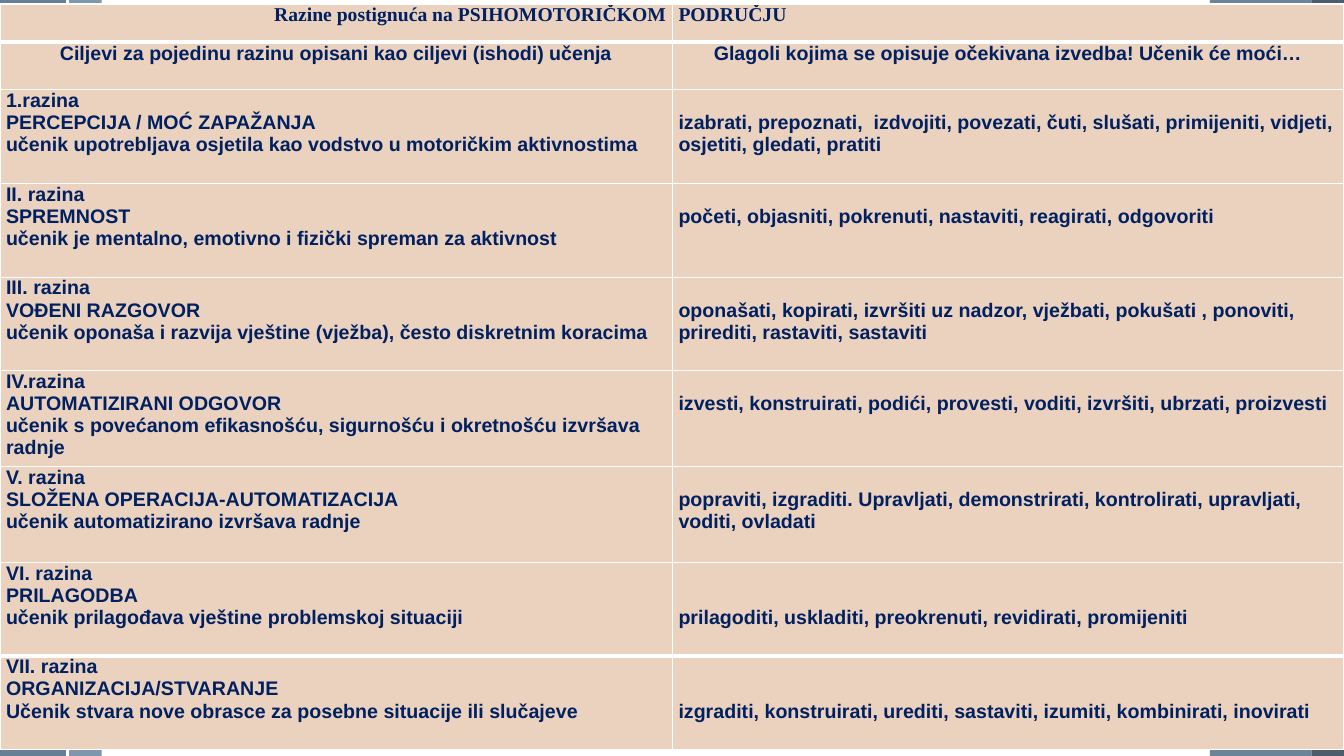
"""Build a slide with a table of psychomotor achievement levels."""
from dataclasses import dataclass

from lxml import etree
from pptx import Presentation
from pptx.dml.color import RGBColor
from pptx.enum.shapes import MSO_CONNECTOR, MSO_SHAPE
from pptx.enum.text import PP_ALIGN
from pptx.oxml.ns import qn
from pptx.util import Inches, Pt

RECTANGLE = MSO_SHAPE.RECTANGLE
STRAIGHT = MSO_CONNECTOR.STRAIGHT
LEFT, CENTER, RIGHT = PP_ALIGN.LEFT, PP_ALIGN.CENTER, PP_ALIGN.RIGHT
BLANK_LAYOUT = 6
PAGE_WIDTH, PAGE_HEIGHT = 13.33, 7.5


@dataclass(frozen=True)
class Theme:
    heading_font: str = "Times New Roman"
    body_font: str = "Arial"
    text_size: int = 14
    line_height: float = 0.22
    side_margin: float = 0.06
    ink: str = "002060"
    cell: str = "EBD2BF"
    rule: str = "FFFFFF"
    pale_strip: str = "7E97AD"
    mid_strip: str = "577289"
    dark_strip: str = "3A4C5B"
    thin: float = 1
    thick: float = 3


class SlideBuilder:
    def __init__(self, page, theme):
        self.page = page
        self.theme = theme

    def strip(self, left, width, color, opacity=100):
        box = self.page.shapes.add_shape(
            RECTANGLE, Inches(left), 0, Inches(width), Inches(PAGE_HEIGHT))
        box.shadow.inherit = False
        box.line.fill.background()
        box.fill.solid()
        box.fill.fore_color.rgb = RGBColor.from_string(color)
        if opacity < 100:
            color_node = box.fill._xPr.find(qn("a:solidFill"))[0]
            etree.SubElement(color_node, qn("a:alpha"), val=str(opacity * 1000))

    def vertical_line(self, left, width):
        line = self.page.shapes.add_connector(
            STRAIGHT, Inches(left), 0, Inches(left), Inches(PAGE_HEIGHT))
        line.line.color.rgb = RGBColor.from_string(self.theme.rule)
        line.line.width = Pt(width)
        etree.SubElement(line._element.spPr, qn("a:effectLst"))

    def table(self, top, widths, heights):
        frame = self.page.shapes.add_table(
            len(heights), len(widths), 0, Inches(top),
            Inches(sum(widths)), Inches(sum(heights)))
        table = frame.table
        table.first_row = table.horz_banding = False
        for column, width in zip(table.columns, widths):
            column.width = Inches(width)
        for row, height in zip(table.rows, heights):
            row.height = Inches(height)
        return table

    def borders(self, cell, top, bottom):
        properties = cell._tc.get_or_add_tcPr()
        widths = {"L": self.theme.thin, "R": self.theme.thin, "T": top, "B": bottom}
        for position, (side, width) in enumerate(widths.items()):
            line = etree.Element(qn(f"a:ln{side}"), w=str(Pt(width)))
            fill = etree.SubElement(line, qn("a:solidFill"))
            etree.SubElement(fill, qn("a:srgbClr"), val=self.theme.rule)
            properties.insert(position, line)

    def cell(self, cell, text, font, align=LEFT, lines_above=0):
        cell.margin_left = cell.margin_right = Inches(self.theme.side_margin)
        cell.margin_top = Inches(lines_above * self.theme.line_height)
        cell.margin_bottom = 0
        cell.fill.solid()
        cell.fill.fore_color.rgb = RGBColor.from_string(self.theme.cell)
        cell.text_frame.text = text
        for para in cell.text_frame.paragraphs:
            para.alignment = align
            for span in para.runs:
                span.font.name = font
                span.font.size = Pt(self.theme.text_size)
                span.font.bold = True
                span.font.color.rgb = RGBColor.from_string(self.theme.ink)


HEADINGS = ("Razine postignuća na PSIHOMOTORIČKOM", "PODRUČJU")
SUBHEADINGS = (
    "Ciljevi za pojedinu razinu opisani kao ciljevi (ishodi) učenja",
    "Glagoli kojima se opisuje očekivana izvedba! Učenik će moći…",
)
LEVELS = [
    ("1.razina", "PERCEPCIJA / MOĆ ZAPAŽANJA",
     "učenik upotrebljava osjetila kao vodstvo u motoričkim aktivnostima",
     "izabrati, prepoznati,  izdvojiti, povezati, čuti, slušati, primijeniti, "
     "vidjeti, osjetiti, gledati, pratiti", 1),
    ("II. razina", "SPREMNOST",
     "učenik je mentalno, emotivno i fizički spreman za aktivnost",
     "početi, objasniti, pokrenuti, nastaviti, reagirati, odgovoriti", 1),
    ("III. razina", "VOĐENI RAZGOVOR",
     "učenik oponaša i razvija vještine (vježba), često diskretnim koracima",
     "oponašati, kopirati, izvršiti uz nadzor, vježbati, pokušati , ponoviti, "
     "prirediti, rastaviti, sastaviti", 1),
    ("IV.razina", "AUTOMATIZIRANI ODGOVOR",
     "učenik s povećanom efikasnošću, sigurnošću i okretnošću izvršava radnje",
     "izvesti, konstruirati, podići, provesti, voditi, izvršiti, ubrzati, proizvesti", 1),
    ("V. razina", "SLOŽENA OPERACIJA-AUTOMATIZACIJA",
     "učenik automatizirano izvršava radnje",
     "popraviti, izgraditi. Upravljati, demonstrirati, kontrolirati, upravljati, "
     "voditi, ovladati", 1),
    ("VI. razina", "PRILAGODBA",
     "učenik prilagođava vještine problemskoj situaciji",
     "prilagoditi, uskladiti, preokrenuti, revidirati, promijeniti", 2),
    ("VII. razina", "ORGANIZACIJA/STVARANJE",
     "Učenik stvara nove obrasce za posebne situacije ili slučajeve",
     "izgraditi, konstruirati, urediti, sastaviti, izumiti, kombinirati, inovirati", 2),
]
ROW_HEIGHTS = [0.38, 0.47, 0.93, 0.93, 0.93, 0.95, 0.95, 0.93, 0.93]
THICK_RULES_BELOW = {0, 7}


def main():
    deck = Presentation()
    deck.slide_width, deck.slide_height = Inches(PAGE_WIDTH), Inches(PAGE_HEIGHT)
    page = deck.slides.add_slide(deck.slide_layouts[BLANK_LAYOUT])
    theme = Theme()
    builder = SlideBuilder(page, theme)

    builder.strip(0.68, 0.33, theme.pale_strip)
    builder.strip(0, 0.67, theme.mid_strip, 90)
    builder.vertical_line(0.67, 1.5)
    builder.strip(12, 1.01, theme.mid_strip, 87)
    builder.strip(13.01, 0.32, theme.dark_strip, 90)

    table = builder.table(0.04, [6.67, 6.66], ROW_HEIGHTS)
    for column, align in enumerate((RIGHT, LEFT)):
        builder.cell(table.cell(0, column), HEADINGS[column], theme.heading_font, align)
        builder.cell(table.cell(1, column), SUBHEADINGS[column], theme.body_font, CENTER)
    for row, (level, name, goal, verbs, lines_above) in enumerate(LEVELS, start=2):
        builder.cell(table.cell(row, 0), "\n".join((level, name, goal)), theme.body_font)
        builder.cell(table.cell(row, 1), verbs, theme.body_font, lines_above=lines_above)
    for row in range(len(ROW_HEIGHTS)):
        top = theme.thick if row - 1 in THICK_RULES_BELOW else theme.thin
        bottom = theme.thick if row in THICK_RULES_BELOW else theme.thin
        for column in range(2):
            builder.borders(table.cell(row, column), top, bottom)

    deck.save("out.pptx")


if __name__ == "__main__":
    main()
